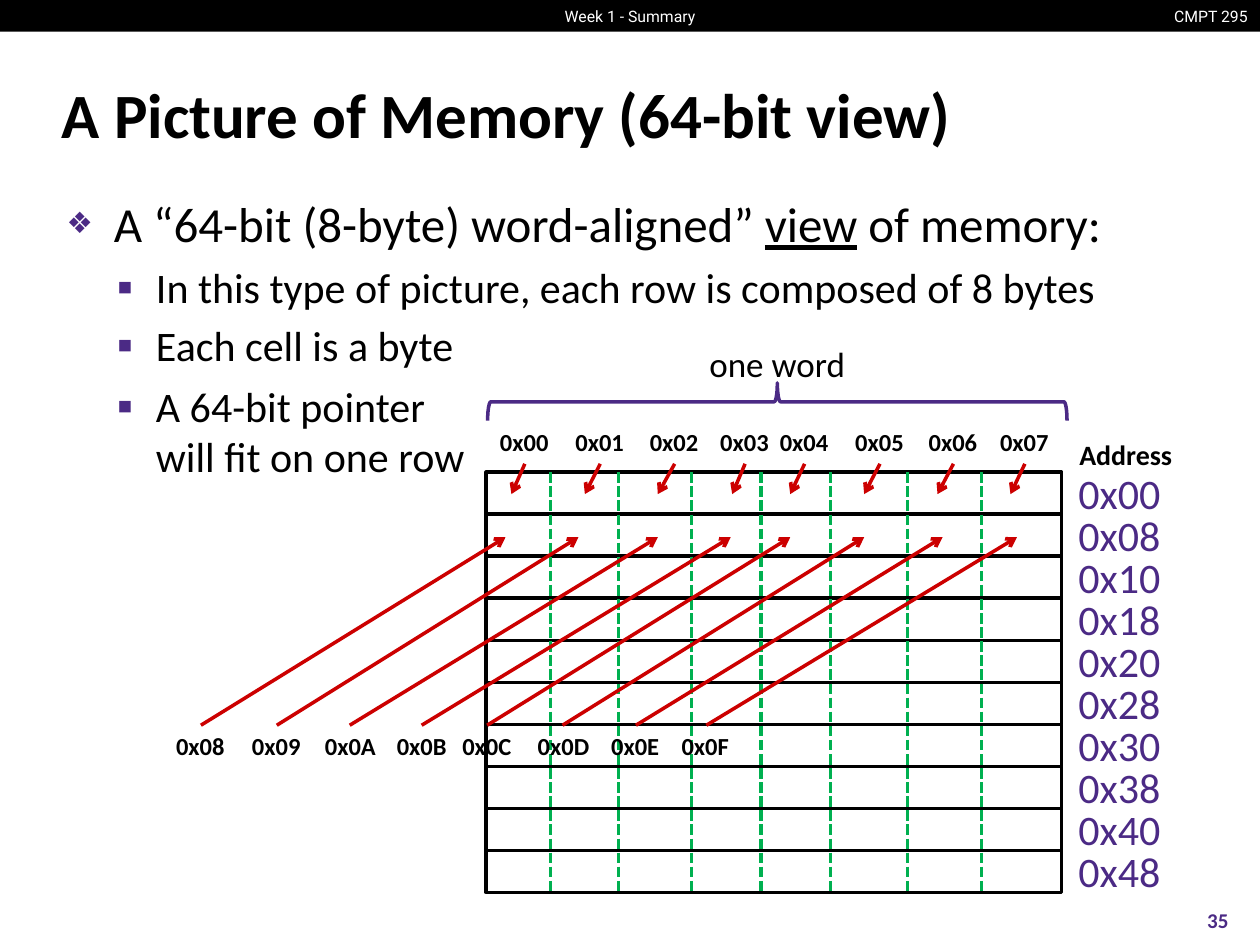
from lxml.etree import SubElement
from pptx import Presentation
from pptx.dml.color import RGBColor
from pptx.enum.dml import MSO_LINE
from pptx.enum.shapes import MSO_CONNECTOR, MSO_SHAPE
from pptx.enum.text import MSO_ANCHOR, MSO_AUTO_SIZE, PP_ALIGN
from pptx.oxml.ns import qn
from pptx.util import Cm, Pt

BLACK, WHITE, PURPLE, GREEN, RED = "000000", "FFFFFF", "4B2A85", "00B050", "CC0000"

# Memory grid, in cm
GRID_LEFT, GRID_TOP, GRID_WIDTH, GRID_HEIGHT = 9.8, 9.52, 11.6, 8.47
ROWS, BYTES_PER_ROW = 10, 8
ROW_HEIGHT = GRID_HEIGHT / ROWS
BYTE_BORDERS = [11.1, 12.47, 13.94, 15.34, 16.74, 18.29, 19.79]

# Byte labels, in cm: left edges of the labels and x of the arrow tips
LABEL_WIDTH, LABEL_HEIGHT, ARROW_OFFSET = 1.6, 0.86, 0.75
FIRST_ROW_LABELS = [9.83, 11.35, 12.85, 14.27, 15.47, 16.99, 18.47, 19.91]
FIRST_ROW_TIPS = [10.31, 11.79, 13.26, 14.76, 15.93, 17.42, 18.9, 20.37]
SECOND_ROW_LABELS = [3.3, 4.83, 6.3, 7.75, 9.07, 10.59, 12.07, 13.49]
SECOND_ROW_TIPS = [10.19, 11.66, 13.26, 14.73, 15.93, 17.42, 19, 20.5]

BULLETS = [
    (0, [("A “64-bit (8-byte) word-aligned” ", False), ("view", True),
         (" of memory:", False)]),
    (1, [("In this type of picture, each row is composed of 8 bytes", False)]),
    (1, [("Each cell is a byte", False)]),
    (1, [("A 64-bit pointer \nwill fit on one row", False)]),
]
# Per level: text size, bullet character, bullet size in %, left indent, hanging indent
LEVELS = [(28, "❖", 60, 0.95, 0.95), (24, "▪", 110, 1.8, 0.79)]


def color(hex_code):
    return RGBColor.from_string(hex_code)


def write(paragraph, text, size=14, ink=BLACK, font="Calibri", bold=False,
          underline=False, align=None):
    """Append text to a paragraph; a newline becomes a line break."""
    for index, line in enumerate(text.split("\n")):
        if index:
            paragraph.add_line_break()
        run = paragraph.add_run()
        run.text = line
        run.font.size = Pt(size)
        run.font.name = font
        run.font.bold = bold
        run.font.underline = underline
        run.font.color.rgb = color(ink)
    if align is not None:
        paragraph.alignment = align


def place(shape, left, top, width, height):
    shape.left, shape.top = Cm(left), Cm(top)
    shape.width, shape.height = Cm(width), Cm(height)


def add_label(slide, text, left, top, width, height, **text_format):
    label = slide.shapes.add_textbox(Cm(left), Cm(top), Cm(width), Cm(height))
    label.text_frame.word_wrap = False
    label.text_frame.vertical_anchor = MSO_ANCHOR.TOP
    write(label.text_frame.paragraphs[0], text, **text_format)
    return label


def add_outline(slide, preset, left, top, width, height, fill=None, line=None):
    shape = slide.shapes.add_shape(preset, Cm(left), Cm(top), Cm(width), Cm(height))
    shape.shadow.inherit = False
    if fill:
        shape.fill.solid()
        shape.fill.fore_color.rgb = color(fill)
    else:
        shape.fill.background()
    if line:
        shape.line.color.rgb = color(line)
        shape.line.width = Pt(2)
    else:
        shape.line.fill.background()
    return shape


def add_line(slide, start, end, ink, dash=None, arrow=False):
    line = slide.shapes.add_connector(
        MSO_CONNECTOR.STRAIGHT, *(Cm(value) for value in (*start, *end)))
    line.line.color.rgb = color(ink)
    line.line.width = Pt(2)
    if dash:
        line.line.dash_style = dash
    if arrow:
        SubElement(line.line._get_or_add_ln(), qn("a:tailEnd"), type="arrow")
    SubElement(line._element.spPr, qn("a:effectLst"))


def set_bullet(paragraph, character, percent, indent, hanging):
    properties = paragraph._p.get_or_add_pPr()
    properties.set("marL", str(Cm(indent)))
    properties.set("indent", str(-Cm(hanging)))
    bullet_color = SubElement(properties, qn("a:buClr"))
    SubElement(bullet_color, qn("a:srgbClr"), val=PURPLE)
    SubElement(properties, qn("a:buSzPct"), val=str(percent * 1000))
    SubElement(properties, qn("a:buChar"), char=character)


def add_header(slide):
    add_outline(slide, MSO_SHAPE.RECTANGLE, 0, 0, 25.4, 0.64, fill=BLACK)
    for text, left, width, align in [("CMPT 295", 23.34, 2.06, PP_ALIGN.RIGHT),
                                     ("Week 1 - Summary", 10.91, 3.58, PP_ALIGN.CENTER)]:
        header = add_label(slide, text, left, 0, width, 0.64, size=9, ink=WHITE,
                           font="Roboto", align=align)
        header.text_frame.vertical_anchor = MSO_ANCHOR.MIDDLE


def fill_title(title):
    place(title, 0.99, 1.22, 23.34, 2.11)
    title.text_frame.vertical_anchor = MSO_ANCHOR.MIDDLE
    title.text_frame.auto_size = MSO_AUTO_SIZE.NONE
    write(title.text_frame.paragraphs[0], "A Picture of Memory (64-bit view)",
          size=36, bold=True, align=PP_ALIGN.LEFT)


def fill_body(body):
    place(body, 1.09, 3.78, 23.24, 13.82)
    frame = body.text_frame
    frame.auto_size = MSO_AUTO_SIZE.NONE
    for index, (level, pieces) in enumerate(BULLETS):
        paragraph = frame.add_paragraph() if index else frame.paragraphs[0]
        paragraph.level = level
        size, *bullet = LEVELS[level]
        set_bullet(paragraph, *bullet)
        for text, underline in pieces:
            write(paragraph, text, size=size, underline=underline)


def add_memory(slide):
    """Draw the rows of memory with their addresses and byte borders."""
    for row in range(ROWS):
        add_outline(slide, MSO_SHAPE.RECTANGLE, GRID_LEFT, GRID_TOP + row * ROW_HEIGHT,
                    GRID_WIDTH, ROW_HEIGHT, fill=WHITE, line=BLACK)
    for border in BYTE_BORDERS:
        add_line(slide, (border, GRID_TOP), (border, GRID_TOP + GRID_HEIGHT), GREEN,
                 dash=MSO_LINE.SQUARE_DOT)
    add_label(slide, "Address", 21.49, 8.69, 2.41, 0.94, size=16, bold=True,
              align=PP_ALIGN.CENTER)
    for row in range(ROWS):
        add_label(slide, f"0x{row * BYTES_PER_ROW:02X}", 21.49, 9.3 + row * ROW_HEIGHT,
                  2.18, 1.27, size=24, ink=PURPLE)


def add_word_brace(slide):
    brace = add_outline(slide, MSO_SHAPE.LEFT_BRACE, 15.29, 2.26, 0.76, 11.68, line=PURPLE)
    brace.rotation = 90
    add_label(slide, "one word", 14.05, 6.78, 3.28, 1.12, size=20)


def add_byte_pointers(slide, first_address, lefts, tips, label_top, arrow_top, tip_top):
    """Label each byte of a row and point an arrow from the label to its cell."""
    for address, (left, tip) in enumerate(zip(lefts, tips), first_address):
        add_label(slide, f"0x{address:02X}", left, label_top, LABEL_WIDTH, LABEL_HEIGHT,
                  bold=True)
        add_line(slide, (left + ARROW_OFFSET, arrow_top), (tip, tip_top), RED, arrow=True)


def main():
    deck = Presentation()
    deck.slide_width, deck.slide_height = Cm(25.4), Cm(19.05)
    slide = deck.slides.add_slide(deck.slide_layouts[1])
    title, body = slide.placeholders
    add_header(slide)
    fill_title(title)
    fill_body(body)
    add_memory(slide)
    add_word_brace(slide)
    add_byte_pointers(slide, 0, FIRST_ROW_LABELS, FIRST_ROW_TIPS, 8.48, 9.35, 9.96)
    add_byte_pointers(slide, BYTES_PER_ROW, SECOND_ROW_LABELS, SECOND_ROW_TIPS,
                      14.62, 14.62, 10.83)
    page_number = add_label(slide, "35", 23.7, 18.03, 1.7, 1.02, size=12, ink=PURPLE,
                            bold=True, align=PP_ALIGN.CENTER)
    page_number.text_frame.vertical_anchor = MSO_ANCHOR.MIDDLE
    deck.save("out.pptx")


if __name__ == "__main__":
    main()
